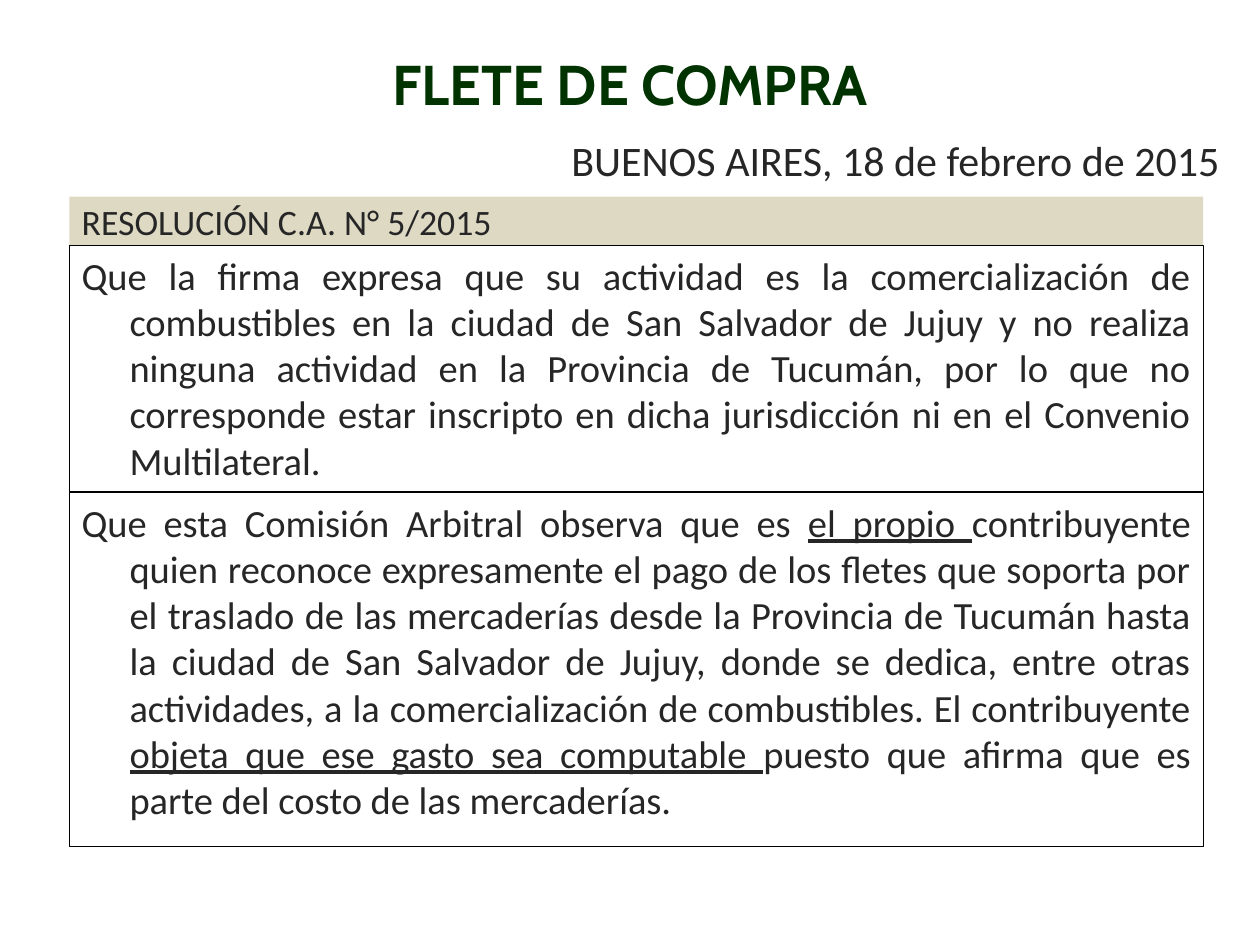
from dataclasses import dataclass
from typing import Optional

from pptx import Presentation
from pptx.dml.color import RGBColor
from pptx.enum.shapes import MSO_SHAPE
from pptx.enum.text import MSO_ANCHOR as Anchor, PP_ALIGN as Align
from pptx.util import Inches, Pt

INK = "262626"
HANGING = Inches(0.38)
LEFT, WIDTH = 0.55, 9


@dataclass
class Run:
    text: str
    underline: bool = False


@dataclass
class Box:
    top: float
    height: float
    runs: list[Run]
    size: float = 22
    align: Align = Align.JUSTIFY
    anchor: Anchor = Anchor.TOP
    fill: Optional[str] = None
    line: Optional[str] = "000000"


def rgb(value: str) -> RGBColor:
    return RGBColor.from_string(value)


def place(sp, left: float, top: float, width: float, height: float) -> None:
    sp.left, sp.top = Inches(left), Inches(top)
    sp.width, sp.height = Inches(width), Inches(height)


def write(sp, runs: list[Run], size: float, align: Align, anchor: Anchor,
          font: str = "Calibri", color: str = INK, bold: bool = False,
          hanging: bool = True) -> None:
    tf = sp.text_frame
    tf.word_wrap = True
    tf.vertical_anchor = anchor
    p = tf.paragraphs[0]
    p.alignment = align
    if hanging:
        pPr = p._p.get_or_add_pPr()
        pPr.set("marL", str(HANGING))
        pPr.set("indent", str(-HANGING))
    p.font.name, p.font.size, p.font.bold = font, Pt(size), bold
    p.font.color.rgb = rgb(color)
    for run in runs:
        r = p.add_run()
        r.text = run.text
        if run.underline:
            r.font.underline = True


def draw_box(s, box: Box) -> None:
    sp = s.shapes.add_shape(MSO_SHAPE.RECTANGLE, 0, 0, 0, 0)
    place(sp, LEFT, box.top, WIDTH, box.height)
    sp.shadow.inherit = False
    if box.fill:
        sp.fill.solid()
        sp.fill.fore_color.rgb = rgb(box.fill)
    else:
        sp.fill.background()
    if box.line:
        sp.line.color.rgb = rgb(box.line)
        sp.line.width = Pt(0.75)
    else:
        sp.line.fill.background()
    write(sp, box.runs, box.size, box.align, box.anchor)


BOXES = [
    Box(1.56, 0.39, [Run("RESOLUCIÓN C.A. N° 5/2015")], size=20.4,
        align=Align.LEFT, anchor=Anchor.MIDDLE, fill="DDD9C3", line=None),
    Box(1.95, 1.95, [
        Run("Que la firma expresa que su actividad es la comercialización de "
            "combustibles en la ciudad de San Salvador de Jujuy y no realiza "
            "ninguna actividad en la Provincia de Tucumán, por lo que no "
            "corresponde estar inscripto en dicha jurisdicción ni en el "
            "Convenio Multilateral."),
    ]),
    Box(3.91, 2.81, [
        Run("Que esta Comisión Arbitral observa que es "),
        Run("el propio ", underline=True),
        Run("contribuyente quien reconoce expresamente el pago de los fletes "
            "que soporta por el traslado de las mercaderías desde la Provincia "
            "de Tucumán hasta la ciudad de San Salvador de Jujuy, donde se "
            "dedica, entre otras actividades, a la comercialización de "
            "combustibles. El contribuyente "),
        Run("objeta que ese gasto sea computable ", underline=True),
        Run("puesto que afirma que es parte del costo de las mercaderías."),
    ]),
]


def main() -> None:
    prs = Presentation()
    prs.slide_width, prs.slide_height = Inches(10), Inches(7.5)
    s = prs.slides.add_slide(prs.slide_layouts[5])

    title = s.shapes.title
    place(title, 0.5, 0.3, 9, 0.72)
    write(title, [Run("FLETE DE COMPRA")], 32, Align.CENTER, Anchor.MIDDLE,
          font="Cabin", color="003300", bold=True, hanging=False)

    date = s.shapes.add_textbox(0, 0, 0, 0)
    place(date, 0.78, 1.02, 9, 0.55)
    write(date, [Run("BUENOS AIRES, 18 de febrero de 2015")], 24,
          Align.RIGHT, Anchor.TOP)

    for box in BOXES:
        draw_box(s, box)
    prs.save("out.pptx")


if __name__ == "__main__":
    main()
